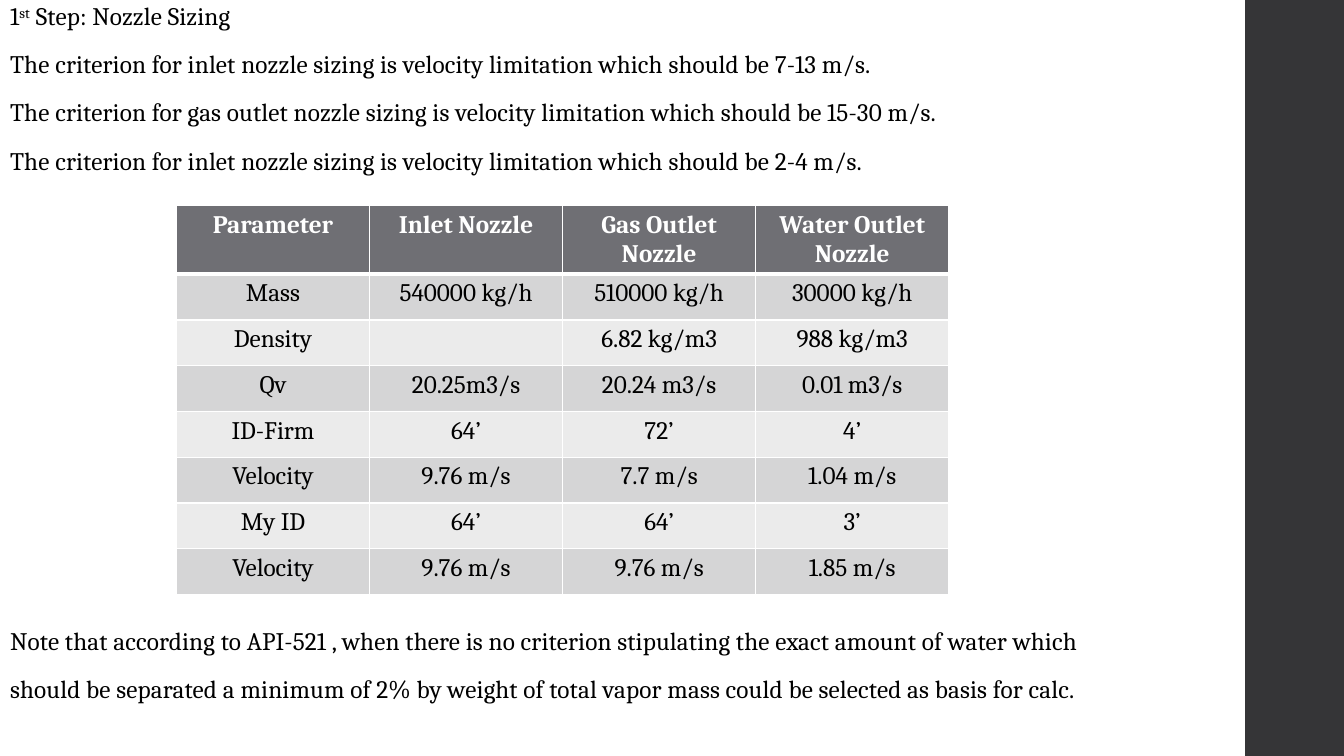
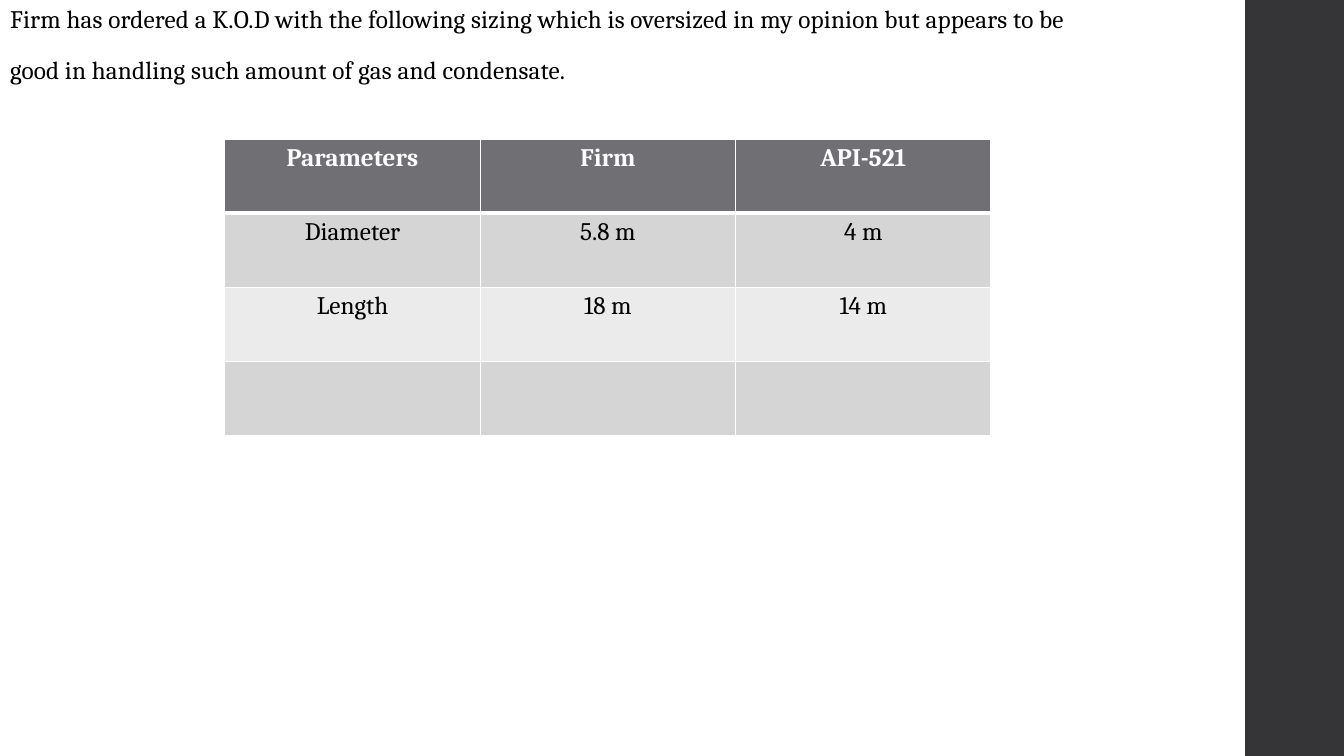
"""Build two slides on nozzle and drum sizing."""
from dataclasses import dataclass
from typing import Any

import pptx
import pptx.dml.color
import pptx.enum.shapes
import pptx.enum.text
import pptx.oxml
import pptx.oxml.ns
import pptx.presentation
import pptx.shapes.autoshape
import pptx.slide
import pptx.table
import pptx.util
from pptx.util import Inches

COLORS = {
    "band": "353537",
    "header": "6F6F74",
    "odd": "D5D5D6",
    "even": "EBEBEB",
    "white": "FFFFFF",
    "black": "000000",
}
TEXT_FORMAT = {"name": "Cambria", "size": pptx.util.Pt(18), "bold": False}
HEADER_FORMAT = {**TEXT_FORMAT, "bold": True}
CENTER = pptx.enum.text.PP_ALIGN.CENTER


@dataclass(frozen=True)
class Line:
    """A body line; text between carets is superscript."""
    text: str
    before: float = 14


@dataclass(frozen=True)
class Grid:
    """A table with its place and rows, header first."""
    left: float
    top: float
    width: float
    height: float
    header_height: float
    rows: list[list[str]]


@dataclass(frozen=True)
class Page:
    """The content of one slide."""
    spacing: float
    lines: list[Line]
    grid: Grid


PAGES = [
    Page(
        0.85,
        [
            Line("1^st^ Step: Nozzle Sizing", 0),
            Line("The criterion for inlet nozzle sizing is velocity limitation which should be 7-13 m/s."),
            Line("The criterion for gas outlet nozzle sizing is velocity limitation which should be 15-30 m/s."),
            Line("The criterion for inlet nozzle sizing is velocity limitation which should be 2-4 m/s."),
            Line("Note that according to API-521 , when there is no criterion stipulating the exact amount of water which", 323),
            Line("should be separated a minimum of 2% by weight of total vapor mass could be selected as basis for calc."),
        ],
        Grid(1.75, 2.04, 7.66, 3.86, 0.68, [
            ["Parameter", "Inlet Nozzle", "Gas Outlet Nozzle", "Water Outlet Nozzle"],
            ["Mass", "540000 kg/h", "510000 kg/h", "30000 kg/h"],
            ["Density", "", "6.82 kg/m3", "988 kg/m3"],
            ["Qv", "20.25m3/s", "20.24 m3/s", "0.01 m3/s"],
            ["ID-Firm", "64’", "72’", "4’"],
            ["Velocity", "9.76 m/s", "7.7 m/s", "1.04 m/s"],
            ["My ID", "64’", "64’", "3’"],
            ["Velocity", "9.76 m/s", "9.76 m/s", "1.85 m/s"],
        ]),
    ),
    Page(
        0.95,
        [
            Line("Firm has ordered a K.O.D with the following sizing which is oversized in my opinion but appears to be", 0),
            Line("good in handling such amount of gas and condensate."),
        ],
        Grid(2.23, 1.38, 7.6, 2.94, 0.735, [
            ["Parameters", "Firm", "API-521"],
            ["Diameter", "5.8 m", "4 m"],
            ["Length", "18 m", "14 m"],
            ["", "", ""],
        ]),
    ),
]


def rgb(name: str) -> pptx.dml.color.RGBColor:
    """Return a named colour."""
    return pptx.dml.color.RGBColor.from_string(COLORS[name])


def apply_format(target: Any, values: dict[str, Any]) -> None:
    """Set each value as an attribute of the target."""
    for name, value in values.items():
        setattr(target, name, value)


def add_band(page: pptx.slide.Slide) -> None:
    """Put the dark right band on the layout of the page."""
    band = page.shapes.add_shape(
        pptx.enum.shapes.MSO_SHAPE.RECTANGLE, Inches(12.35), 0, Inches(0.98), Inches(7.5))
    band.shadow.inherit = False
    band.fill.solid()
    band.fill.fore_color.rgb = rgb("band")
    band.line.fill.background()
    page.slide_layout.shapes.element.append(band.element)


def fill_body(body: pptx.shapes.autoshape.Shape, lines: list[Line], spacing: float) -> None:
    """Place the body and write its lines."""
    apply_format(body, {"left": 0, "top": 0, "width": Inches(12.33), "height": Inches(7.5)})
    frame = body.text_frame
    apply_format(frame, {
        "word_wrap": True,
        "auto_size": pptx.enum.text.MSO_AUTO_SIZE.NONE,
        "vertical_anchor": pptx.enum.text.MSO_ANCHOR.TOP,
    })
    for index, line in enumerate(lines):
        para = frame.add_paragraph() if index else frame.paragraphs[0]
        apply_format(para, {
            "line_spacing": spacing,
            "space_before": pptx.util.Pt(line.before),
            "space_after": pptx.util.Pt(2),
        })
        for part, text in enumerate(line.text.split("^")):
            span = para.add_run()
            span.text = text
            apply_format(span.font, TEXT_FORMAT)
            span.font.color.rgb = rgb("black")
            if part % 2:
                span.font._element.set("baseline", "30000")
    for properties in body.element.iter(pptx.oxml.ns.qn("a:pPr")):
        properties.set("marL", "0")
        properties.set("indent", "0")
        properties.append(pptx.oxml.parse_xml(f"<a:buNone {pptx.oxml.ns.nsdecls('a')}/>"))
    for properties in body.element.iter(pptx.oxml.ns.qn("a:rPr")):
        properties.set("spc", "10")


def add_borders(cell: pptx.table._Cell, top: int, bottom: int) -> None:
    """Draw white borders, with top and bottom widths in points."""
    properties = cell._tc.get_or_add_tcPr()
    for side, width in {"L": 1, "R": 1, "T": top, "B": bottom}.items():
        properties.append(pptx.oxml.parse_xml(
            f'<a:ln{side} {pptx.oxml.ns.nsdecls("a")} w="{pptx.util.Pt(width)}"><a:solidFill>'
            f'<a:srgbClr val="{COLORS["white"]}"/></a:solidFill></a:ln{side}>'))


def add_grid(page: pptx.slide.Slide, grid: Grid) -> None:
    """Draw a table with a dark header and banded rows."""
    row_count, column_count = len(grid.rows), len(grid.rows[0])
    table = page.shapes.add_table(
        row_count, column_count, Inches(grid.left), Inches(grid.top),
        Inches(grid.width), Inches(grid.height)).table
    for column in table.columns:
        column.width = Inches(grid.width / column_count)
    row_height = (grid.height - grid.header_height) / (row_count - 1)
    for row, texts in enumerate(grid.rows):
        is_header = row == 0
        table.rows[row].height = Inches(grid.header_height if is_header else row_height)
        fill = "header" if is_header else "odd" if row % 2 else "even"
        for column, text in enumerate(texts):
            cell = table.cell(row, column)
            add_borders(cell, 3 if row == 1 else 1, 3 if is_header else 1)
            cell.fill.solid()
            cell.fill.fore_color.rgb = rgb(fill)
            para = cell.text_frame.paragraphs[0]
            para.alignment = CENTER
            if text:
                span = para.add_run()
                span.text = text
                apply_format(span.font, HEADER_FORMAT if is_header else TEXT_FORMAT)
                span.font.color.rgb = rgb("white" if is_header else "black")


def main() -> None:
    """Build and save the deck."""
    deck = pptx.Presentation()
    apply_format(deck, {"slide_width": Inches(13.33), "slide_height": Inches(7.5)})
    layout = deck.slide_layouts[1]
    for number, content in enumerate(PAGES):
        page = deck.slides.add_slide(layout)
        if number == 0:
            add_band(page)
        title = page.shapes.title.element
        title.getparent().remove(title)
        fill_body(page.placeholders[1], content.lines, content.spacing)
        add_grid(page, content.grid)
    deck.save("out.pptx")


if __name__ == "__main__":
    main()
